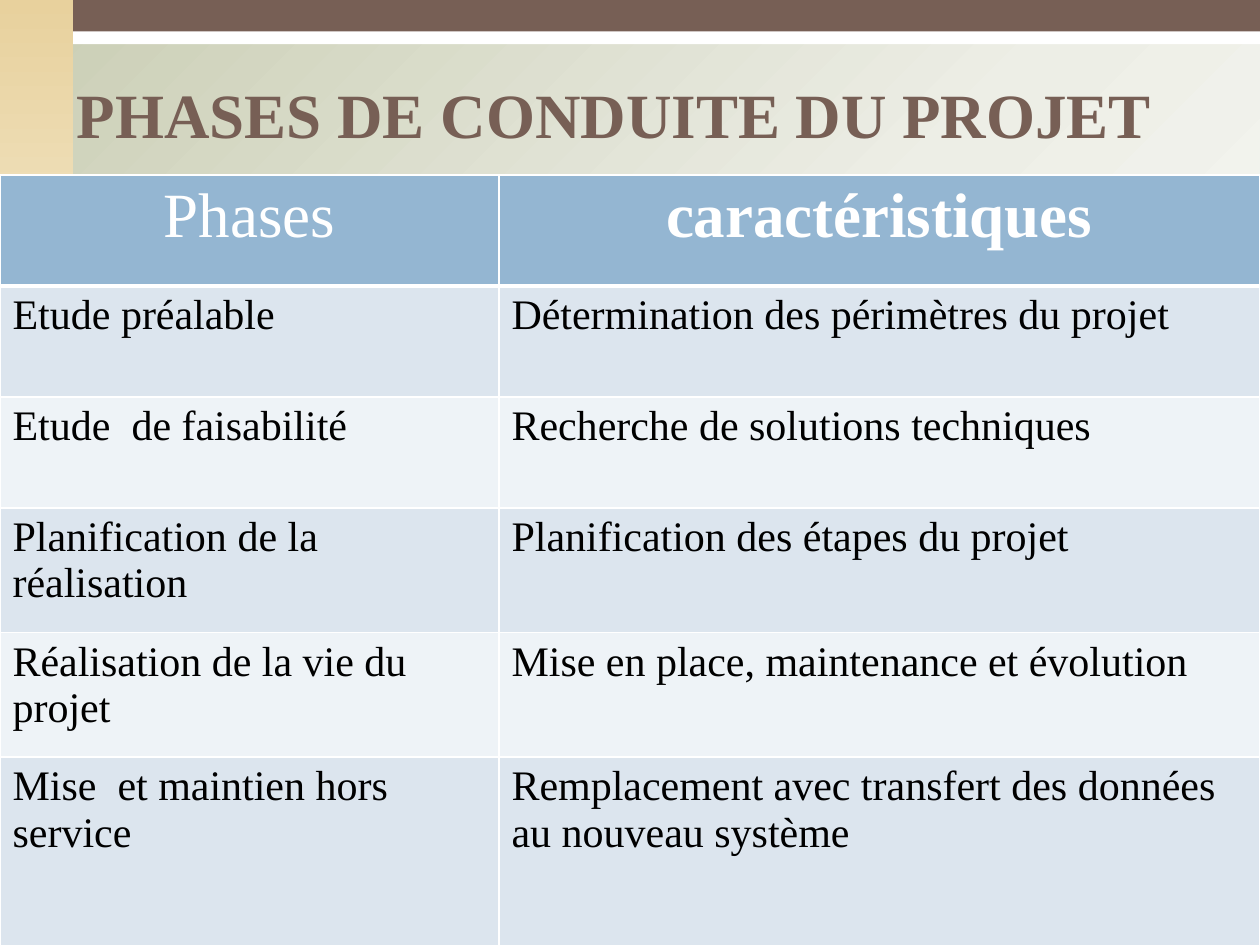
from copy import deepcopy

from pptx import Presentation
from pptx.dml.color import RGBColor
from pptx.enum.shapes import MSO_SHAPE as Shape
from pptx.enum.text import MSO_ANCHOR as Anchor, PP_ALIGN as Align
from pptx.oxml.ns import qn
from pptx.oxml.xmlchemy import OxmlElement
from pptx.util import Inches, Pt

WIDTH, HEIGHT = 10, 7.5
SIDE = 0.58
FONT = "Times New Roman"
COLORS = {
    "white": "FFFFFF",
    "black": "000000",
    "brown": "775F55",
    "header": "94B6D2",
    "odd_row": "DCE5EE",
    "even_row": "EEF3F7",
}
BACKDROP = ["C9CDB3", "EDEEE6", "FFFFFF"]
SAND = ["E8D19D", "F7F0DE", "FFFFFF"]

COLUMN_WIDTHS = [3.96, 6.04]
ROW_HEIGHTS = [0.88, 0.88, 0.88, 0.99, 0.99, 1.51]
TABLE_TOP = 1.39
PHASES = [
    ("Phases", "caractéristiques"),
    ("Etude préalable", "Détermination des périmètres du projet"),
    ("Etude  de faisabilité", "Recherche de solutions techniques"),
    ("Planification de la réalisation", "Planification des étapes du projet"),
    ("Réalisation de la vie du projet", "Mise en place, maintenance et évolution"),
    ("Mise  et maintien hors service",
     "Remplacement avec transfert des données au nouveau système"),
]


def rgb(name):
    return RGBColor.from_string(COLORS[name])


def fill_gradient(fill, element, hexes, angle):
    """Spread the colours evenly; angle is counter-clockwise, in degrees."""
    fill.gradient()
    fill.gradient_angle = angle
    stop_list = next(element.iter(qn("a:gsLst")))
    while len(stop_list) < len(hexes):
        stop_list.append(deepcopy(stop_list[0]))
    for i, (stop, color) in enumerate(zip(fill.gradient_stops, hexes)):
        stop.position = i / (len(hexes) - 1)
        stop.color.rgb = RGBColor.from_string(color)


def add_band(slide, left, width, height, color=None):
    """Add a borderless rectangle hanging from the slide's top edge."""
    band = slide.shapes.add_shape(
        Shape.RECTANGLE, Inches(left), 0, Inches(width), Inches(height))
    band.shadow.inherit = False
    band.line.fill.background()
    if color:
        band.fill.solid()
        band.fill.fore_color.rgb = rgb(color)
    return band


def style_text(paragraph, size, color, bold, align):
    paragraph.alignment = align
    font = paragraph.font
    font.name, font.size, font.bold = FONT, Pt(size), bold
    font.color.rgb = rgb(color)


def set_title(slide, text):
    title = slide.shapes.title
    title.left, title.top = Inches(0.51), 0
    title.width, title.height = Inches(9), Inches(1.25)
    title.text_frame.text = text
    title.text_frame.vertical_anchor = Anchor.BOTTOM
    style_text(title.text_frame.paragraphs[0], 36, "brown", True, Align.LEFT)


def add_borders(cell, bottom_width):
    properties = cell._tc.get_or_add_tcPr()
    for side, width in zip("LRTB", (1, 1, 1, bottom_width)):
        line = OxmlElement(f"a:ln{side}")
        line.set("w", str(Pt(width)))
        solid = OxmlElement("a:solidFill")
        color = OxmlElement("a:srgbClr")
        color.set("val", COLORS["white"])
        solid.append(color)
        line.append(solid)
        properties.append(line)


def add_phase_table(slide):
    table = slide.shapes.add_table(
        len(PHASES), len(COLUMN_WIDTHS), 0, Inches(TABLE_TOP),
        Inches(WIDTH), Inches(HEIGHT - TABLE_TOP)).table
    for column, width in zip(table.columns, COLUMN_WIDTHS):
        column.width = Inches(width)
    for r, (texts, height) in enumerate(zip(PHASES, ROW_HEIGHTS)):
        table.rows[r].height = Inches(height)
        is_header = r == 0
        row_color = "header" if is_header else "odd_row" if r % 2 else "even_row"
        for c, text in enumerate(texts):
            cell = table.cell(r, c)
            cell.text = text
            add_borders(cell, 3 if is_header else 1)
            cell.fill.solid()
            cell.fill.fore_color.rgb = rgb(row_color)
            paragraph = cell.text_frame.paragraphs[0]
            if is_header:
                style_text(paragraph, 36, "white", c == 1, Align.CENTER)
            else:
                style_text(paragraph, 24, "black", False, Align.LEFT)


def main():
    deck = Presentation()
    deck.slide_width, deck.slide_height = Inches(WIDTH), Inches(HEIGHT)
    slide = deck.slides.add_slide(deck.slide_layouts[5])
    fill_gradient(slide.background.fill, slide._element, BACKDROP, 315)
    add_band(slide, 0, WIDTH, 0.35, "white")
    side_band = add_band(slide, 0, SIDE, HEIGHT)
    fill_gradient(side_band.fill, side_band._element, SAND, 270)
    add_band(slide, SIDE, WIDTH - SIDE, 0.25, "brown")
    set_title(slide, "PHASES DE CONDUITE DU PROJET")
    add_phase_table(slide)
    deck.save("out.pptx")


if __name__ == "__main__":
    main()
